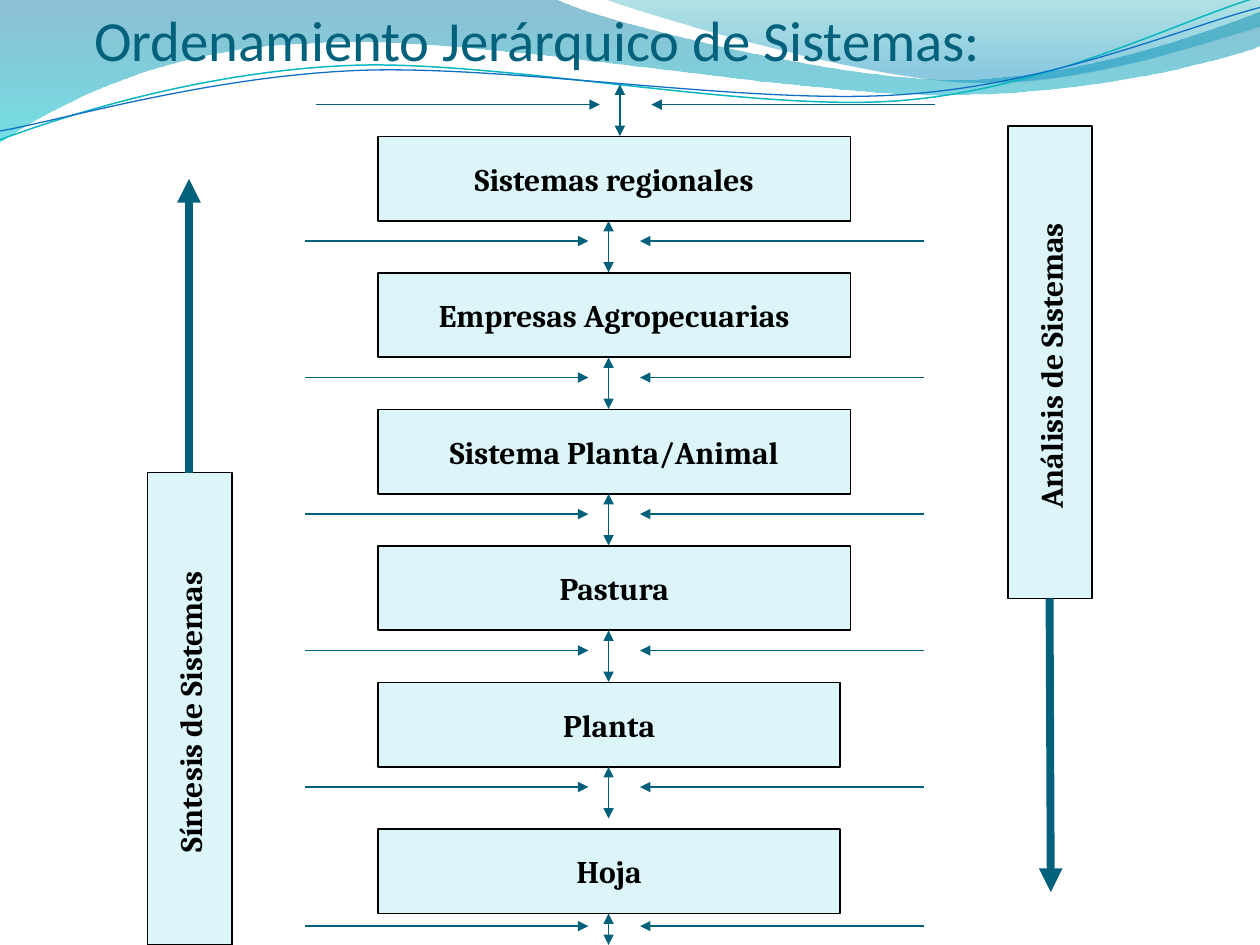
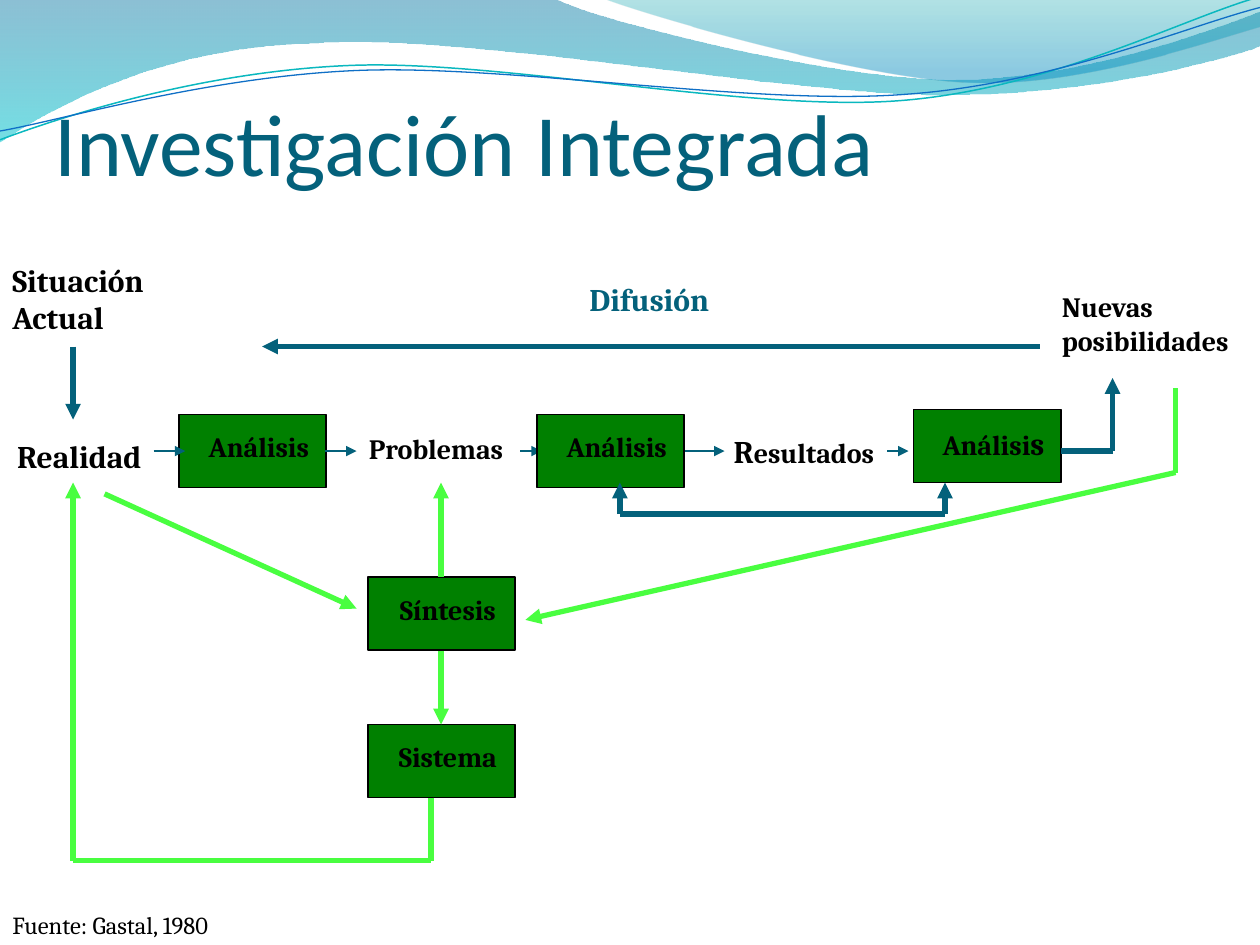
from math import cos, radians, sin
from pptx import Presentation
from pptx.util import Inches, Pt
from pptx.dml.color import RGBColor
from pptx.enum.shapes import MSO_CONNECTOR as CONN, MSO_SHAPE as SHAPE
from pptx.enum.text import MSO_ANCHOR as ANCHOR, MSO_AUTO_SIZE as FIT, PP_ALIGN as ALIGN
from pptx.oxml.ns import qn
from lxml.etree import SubElement

# Colours and fonts
TEAL = RGBColor(0x04, 0x61, 0x7B)
PALE = RGBColor(0xDB, 0xF5, 0xF9)
GREEN = RGBColor(0x00, 0x80, 0x00)
LIME = RGBColor(0x49, 0xFE, 0x40)
BLACK = RGBColor(0, 0, 0)
WAVE_BLUE = RGBColor(0x00, 0x74, 0xA1)
WAVE_CYAN = RGBColor(0x00, 0xC6, 0xCF)
WAVE_TEAL = RGBColor(0x00, 0xA1, 0xA9)
WAVE_SKY = RGBColor(0x00, 0x8B, 0xBF)
CURVE_CYAN = RGBColor(0x0A, 0xB8, 0xBF)
CURVE_BLUE = RGBColor(0x0F, 0x6F, 0xC6)
HEAD, BODY = "Calibri", "Cambria"

# Header waves: a start point, then cubic curves (6 numbers) or lines (2 numbers)
WIDE_WAVE = [(0, 0), (4.4, -0.01), (4.76, 0.17, 6.64, 0.63, 7.58, 0.63),
             (8.53, 0.63, 9.58, 0.26, 10, 0.09), (10.01, 0.36),
             (9.83, 0.44, 8.7, 0.76, 7.46, 0.75),
             (6.22, 0.75, 3.82, 0.28, 2.57, 0.34),
             (1.29, 0.36, 0.46, 0.83, -0.01, 1.13), (0, 0)]
RIGHT_WAVE = [(4.79, -0.01), (5.09, 0.11, 6.82, 0.62, 7.69, 0.65),
              (8.56, 0.69, 9.61, 0.32, 10, 0.21), (10, 0), (4.79, -0.01)]
CYAN_CURVE = [(0, 1.11), (0.48, 0.93, 1.58, 0.57, 2.77, 0.52),
              (3.95, 0.47, 5.93, 0.89, 7.13, 0.8),
              (8.33, 0.71, 9.38, 0.15, 9.98, -0.02)]
BLUE_CURVE = [(0, 1.04), (0.47, 0.96, 1.64, 0.61, 2.83, 0.56),
              (4.03, 0.51, 5.97, 0.84, 7.17, 0.75),
              (8.36, 0.67, 9.41, 0.21, 10, 0.06)]
CURVE_TILT = -2.7


def turn(x, y, degrees):
    """Turn a point clockwise about the slide's top left corner."""
    a = radians(degrees)
    return x * cos(a) - y * sin(a), x * sin(a) + y * cos(a)


def add_outline(s, outline, close, tilt=0):
    """Freeform with true cubic curves, laid out level and then tilted."""
    pts = [turn(Inches(seg[i]), Inches(seg[i + 1]), -tilt)
           for seg in outline for i in range(0, len(seg), 2)]
    builder = s.shapes.build_freeform(*pts[0])
    builder.add_line_segments(pts[1:], close=close)
    sp = builder.convert_to_shape()
    sp.shadow.inherit = False

    # Join each curve's three points into one cubic segment
    geometry = next(sp._element.iter(qn("a:path")))
    lines = iter(geometry.findall(qn("a:lnTo")))
    for seg in outline[1:]:
        first = next(lines)
        if len(seg) == 6:
            first.tag = qn("a:cubicBezTo")
            for _ in range(2):
                extra = next(lines)
                first.append(extra[0])
                geometry.remove(extra)

    # Tilt about the centre, keeping the points in place
    if tilt:
        x, y = turn(sp.left + sp.width / 2, sp.top + sp.height / 2, tilt)
        sp.left, sp.top = round(x - sp.width / 2), round(y - sp.height / 2)
        sp.rotation = tilt % 360
    return sp


def add_wave(s, outline, stops):
    """Filled wave; stops are (position, colour, opacity in percent)."""
    sp = add_outline(s, outline, True)
    sp.line.fill.background()
    sp.fill.gradient()
    sp.fill.gradient_angle = 270
    for stop, (pos, color, _) in zip(sp.fill.gradient_stops, stops):
        stop.position = pos
        stop.color.rgb = color
    for clr, (_, _, opacity) in zip(sp._element.spPr.iter(qn("a:srgbClr")), stops):
        SubElement(clr, qn("a:alpha")).set("val", str(opacity * 1000))


def add_curve(s, outline, color, width):
    sp = add_outline(s, outline, False, CURVE_TILT)
    sp.fill.background()
    sp.line.color.rgb = color
    sp.line.width = Pt(width)


def write(tf, text, *, size=16, color=BLACK, font=BODY, bold=True, align=ALIGN.CENTER):
    """Write text; a list of (text, size) pairs gives mixed sizes."""
    p = tf.paragraphs[0]
    p.alignment = align
    for part, part_size in [(text, size)] if isinstance(text, str) else text:
        r = p.add_run()
        r.text = part
        r.font.name, r.font.size, r.font.bold = font, Pt(part_size), bold
        r.font.color.rgb = color


def add_text(s, x, y, w, h, text, **fmt):
    tf = s.shapes.add_textbox(Inches(x), Inches(y), Inches(w), Inches(h)).text_frame
    tf.word_wrap = True
    tf.auto_size = FIT.SHAPE_TO_FIT_TEXT
    write(tf, text, **fmt)
    return tf


def add_title(s, x, y, w, h, text, size):
    tf = add_text(s, x, y, w, h, text, size=size, color=TEAL, font=HEAD,
                  bold=False, align=ALIGN.LEFT)
    tf.auto_size = FIT.NONE
    tf.vertical_anchor = ANCHOR.BOTTOM
    tf.margin_left = tf.margin_right = tf.margin_bottom = 0


def add_box(s, x, y, w, h, fill, text=None, rotation=0):
    sp = s.shapes.add_shape(SHAPE.RECTANGLE, Inches(x), Inches(y), Inches(w), Inches(h))
    sp.shadow.inherit = False
    sp.fill.solid()
    sp.fill.fore_color.rgb = fill
    sp.line.color.rgb = BLACK
    sp.line.width = Pt(1)
    sp.rotation = rotation
    if text:
        tf = sp.text_frame
        tf.word_wrap = False
        tf.vertical_anchor = ANCHOR.MIDDLE
        write(tf, text, size=18)


def add_step(s, x, y, text):
    """Green box with its label on top."""
    add_box(s, x, y, 1.17, 0.58, GREEN)
    add_text(s, x + 0.1, y + 0.07, 1.07, 0.37, text)


def add_line(s, start, end, color=TEAL, width=1.0, head=False, tail=True):
    cn = s.shapes.add_connector(CONN.STRAIGHT, *map(Inches, start + end))
    cn.line.color.rgb = color
    cn.line.width = Pt(width)
    ln = cn.line._get_or_add_ln()
    for tag, shown in (("a:headEnd", head), ("a:tailEnd", tail)):
        if shown:
            SubElement(ln, qn(tag)).set("type", "triangle")
    SubElement(cn._element.spPr, qn("a:effectLst"))


def add_route(s, *points, color=TEAL, tail=True):
    """Thick line through the points, with an arrowhead on the last stretch."""
    for i, (a, b) in enumerate(zip(points, points[1:]), 2):
        add_line(s, a, b, color, 3, tail=tail and i == len(points))


def add_exchange(s, x, top, bottom, side_y):
    """Double vertical arrow with an inflow from each side."""
    add_line(s, (x, top), (x, bottom), head=True)
    add_line(s, (x - 2.41, side_y), (x - 0.16, side_y))
    add_line(s, (x + 2.5, side_y), (x + 0.25, side_y))


def new_slide(prs):
    s = prs.slides.add_slide(prs.slide_layouts[6])
    add_wave(s, WIDE_WAVE, [(0, WAVE_BLUE, 45), (1, WAVE_CYAN, 55)])
    add_wave(s, RIGHT_WAVE, [(0, WAVE_TEAL, 30), (0.8, WAVE_SKY, 45)])
    add_curve(s, CYAN_CURVE, CURVE_CYAN, 0.85)
    add_curve(s, BLUE_CURVE, CURVE_BLUE, 0.75)
    return s


def hierarchy_slide(prs):
    s = new_slide(prs)
    add_title(s, 0.75, 0, 8.5, 0.58, "Ordenamiento Jerárquico de Sistemas:", 32.4)

    # Levels, with an exchange below each of them
    levels = ["Sistemas regionales", "Empresas Agropecuarias", "Sistema Planta/Animal",
              "Pastura", "Planta"]
    pitch, height = 13 / 12, 0.67
    add_exchange(s, 4.92, 0.67, 1.08, 0.83)
    for i, name in enumerate(levels):
        top = pitch * (i + 1)
        bottom = top + height
        add_box(s, 3, top, 3.67 if name == "Planta" else 3.75, height, PALE, name)
        add_exchange(s, 4.83, bottom, bottom + 0.41, bottom + 0.16)
    add_box(s, 3, 6.58, 3.67, height, PALE, "Hoja")
    add_exchange(s, 4.83, 7.25, 7.5, 7.35)

    # Upward synthesis and downward analysis
    add_box(s, -0.37, 5.29, 3.75, height, PALE, "Síntesis de Sistemas ", 270)
    add_box(s, 6.46, 2.54, 3.75, height, PALE, "Análisis de Sistemas ", 270)
    add_line(s, (1.5, 3.75), (1.5, 1.42), width=4.5)
    add_line(s, (8.33, 4.75), (8.34, 7.08), width=4.5)


def research_slide(prs):
    s = new_slide(prs)
    add_title(s, 0.43, 0.29, 9, 1.25, "Investigación Integrada", 50)

    # Main row
    add_step(s, 1.42, 3.29, "Análisis")
    add_text(s, 0, 3.42, 1.26, 0.4, "Realidad", size=18)
    add_text(s, 2.75, 3.38, 1.42, 0.37, "Problemas")
    add_text(s, 5.67, 3.38, 1.42, 0.4, [("R", 18), ("esultados", 16)])
    for x1, x2 in [(1.22, 1.47), (2.58, 2.83), (4.13, 4.3), (5.42, 5.75), (7.04, 7.21)]:
        add_line(s, (x1, 3.58), (x2, 3.58))
    add_step(s, 4.26, 3.29, "Análisis")
    add_step(s, 7.25, 3.25, [("Análisi", 16), ("s", 18)])

    # Start and outcome
    add_text(s, 8.33, 2.25, 1.67, 0.64, "Nuevas posibilidades", align=ALIGN.LEFT)
    add_text(s, 0, 2.02, 2, 0.4, "Situación Actual", size=18, align=ALIGN.LEFT)
    add_text(s, 4.58, 2.17, 1.42, 0.5, "Difusión", size=18, color=TEAL, align=ALIGN.LEFT)

    # Synthesis column
    add_step(s, 2.92, 4.58, "Síntesis")
    add_step(s, 2.92, 5.75, "Sistema")

    # Synthesis routes
    add_route(s, (3.5, 4.58), (3.5, 3.83), color=LIME)
    add_route(s, (0.83, 3.92), (2.83, 4.83), color=LIME)
    add_route(s, (9.33, 3.08), (9.33, 3.75), (4.17, 4.92), color=LIME)
    add_route(s, (3.5, 5.17), (3.5, 5.75), color=LIME)
    add_route(s, (3.42, 6.33), (3.42, 6.83), (0.58, 6.83), (0.58, 3.83), color=LIME)

    # Analysis and diffusion routes
    add_route(s, (8.42, 3.58), (8.83, 3.58), (8.83, 3))
    add_route(s, (4.92, 4.08), (7.5, 4.08), tail=False)
    for x in (4.92, 7.5):
        add_route(s, (x, 4.08), (x, 3.83))
    add_route(s, (8.25, 2.75), (2.08, 2.75))
    add_route(s, (0.58, 2.75), (0.58, 3.33))

    add_text(s, 0, 7.17, 2.67, 0.33, "Fuente: Gastal, 1980", size=14, bold=False,
             align=ALIGN.LEFT)


def main():
    prs = Presentation()
    prs.slide_width, prs.slide_height = Inches(10), Inches(7.5)
    hierarchy_slide(prs)
    research_slide(prs)
    prs.save("out.pptx")


if __name__ == "__main__":
    main()
